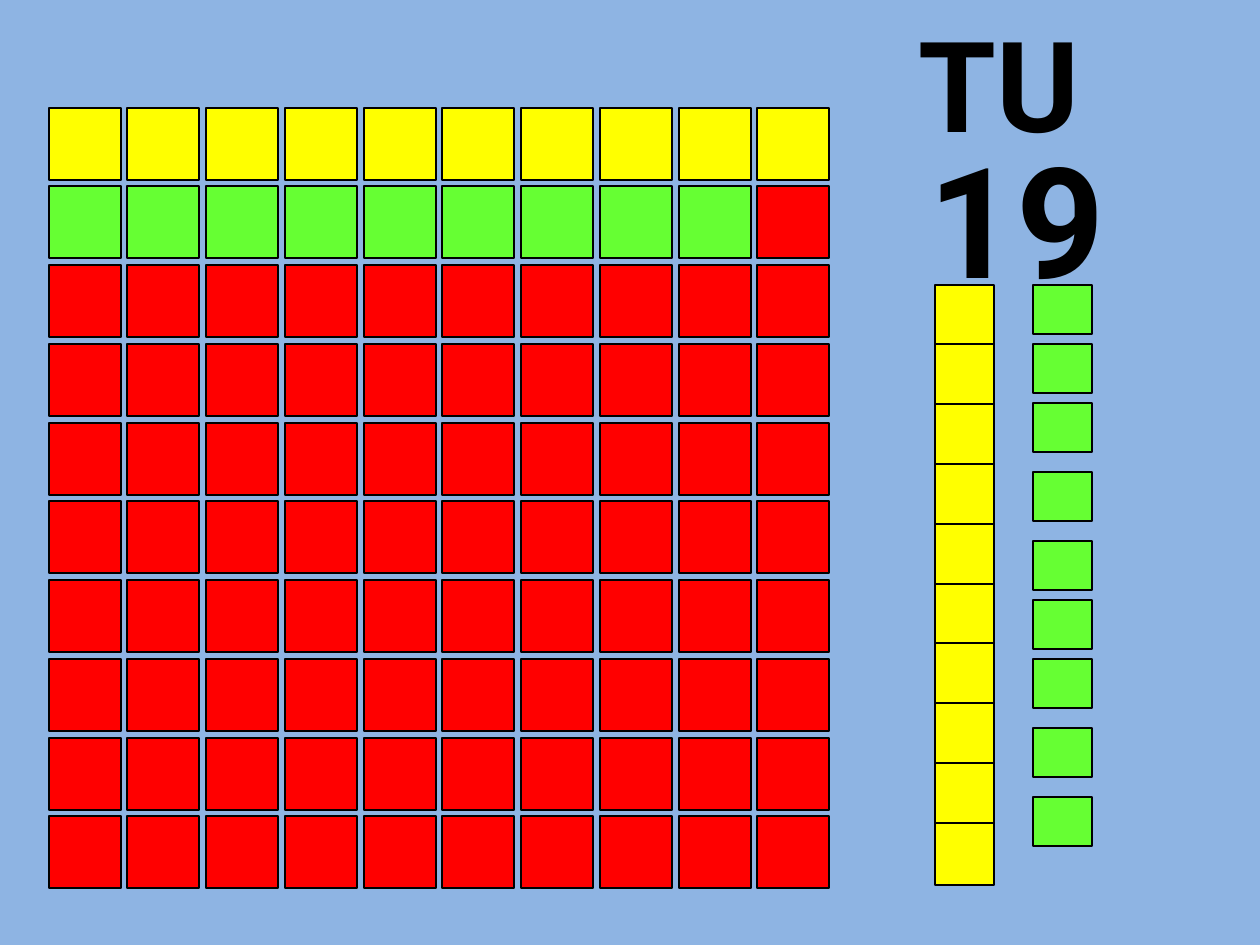
from pptx import Presentation
from pptx.dml.color import RGBColor
from pptx.enum.shapes import MSO_SHAPE as Shape
from pptx.enum.text import MSO_AUTO_SIZE as AutoSize
from pptx.util import Emu, Pt

PX_PER_INCH = 126
SKY = RGBColor(0x8E, 0xB4, 0xE3)
YELLOW = RGBColor(0xFF, 0xFF, 0x00)
GREEN = RGBColor(0x66, 0xFF, 0x33)
RED = RGBColor(0xFF, 0x00, 0x00)
BLACK = RGBColor(0x00, 0x00, 0x00)

TENS = 10
ONES = 9
GRID_SIDE = 10


def px(length):
    return Emu(round(length * 914400 / PX_PER_INCH))


class Painter:
    font_name = "Roboto"
    line_width = Pt(0.75)

    def __init__(self, deck):
        self.page = deck.slides.add_slide(deck.slide_layouts[6])

    def background(self, color):
        fill = self.page.background.fill
        fill.solid()
        fill.fore_color.rgb = color

    def group(self):
        return self.page.shapes.add_group_shape()

    def block(self, left, top, width, height, color, group=None):
        shapes = (group or self.page).shapes
        box = shapes.add_shape(Shape.RECTANGLE, px(left), px(top), px(width), px(height))
        box.shadow.inherit = False
        box.fill.solid()
        box.fill.fore_color.rgb = color
        box.line.color.rgb = BLACK
        box.line.width = self.line_width

    def heading(self, text, left, top, width, height, size):
        box = self.page.shapes.add_textbox(px(left), px(top), px(width), px(height))
        frame = box.text_frame
        frame.text = text
        frame.word_wrap = True
        frame.auto_size = AutoSize.SHAPE_TO_FIT_TEXT
        font = frame.paragraphs[0].runs[0].font
        font.name = self.font_name
        font.size = Pt(size)
        font.bold = True
        font.color.rgb = BLACK


def cell_color(number):
    if number < TENS:
        return YELLOW
    return GREEN if number < TENS + ONES else RED


def draw_hundred_grid(painter):
    for number in range(GRID_SIDE * GRID_SIDE):
        row, column = divmod(number, GRID_SIDE)
        left = 49 + column * 315 // 4
        top = 108 + row * 315 // 4
        painter.block(left, top, 72, 72, cell_color(number))


def draw_tens_rod(painter):
    rod = painter.group()
    for index in range(TENS):
        painter.block(935, 285 + index * 299 // 5, 59, 62, YELLOW, rod)


def draw_ones(painter):
    top = 285
    for index in range(ONES):
        painter.block(1033, top, 59, 49, GREEN)
        top += 59 if index % 4 < 2 else 69


def main():
    deck = Presentation()
    deck.slide_width, deck.slide_height = px(1260), px(945)
    painter = Painter(deck)
    painter.background(SKY)
    draw_hundred_grid(painter)
    painter.heading("19", 916, 118, 473, 199, 88)
    painter.heading("TU", 906, 0, 473, 165, 72)
    draw_tens_rod(painter)
    draw_ones(painter)
    deck.save("out.pptx")


if __name__ == "__main__":
    main()
